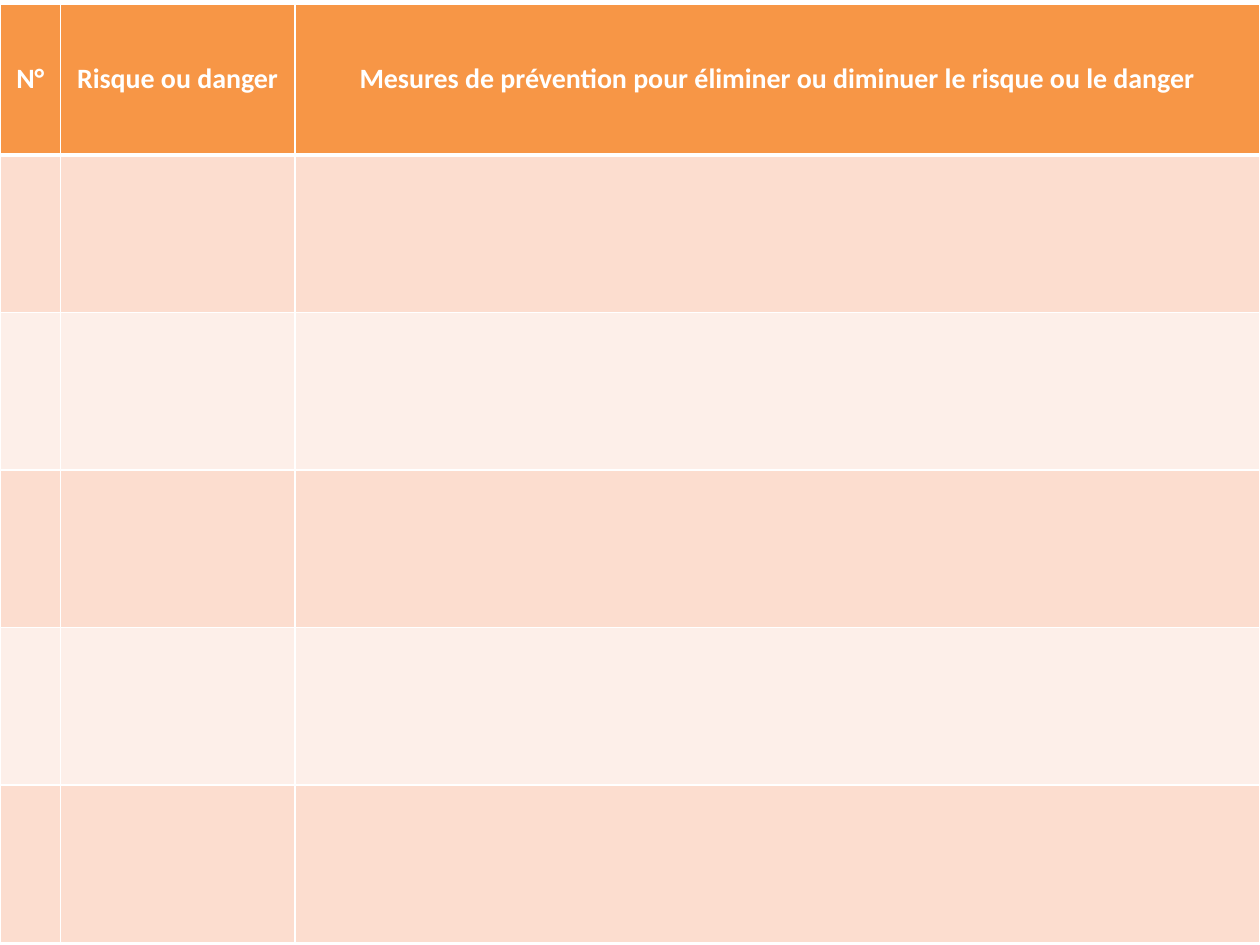
"""Build a one-slide risk prevention table with a header and five blank rows."""
from lxml.etree import SubElement
from pptx import Presentation
from pptx.dml.color import RGBColor
from pptx.enum.text import MSO_ANCHOR as Anchor, PP_ALIGN as Align
from pptx.oxml.ns import qn
from pptx.util import Inches, Pt


def paint(fill, color):
    fill.solid()
    fill.fore_color.rgb = RGBColor.from_string(color)


def add_borders(cell, top, bottom):
    properties = cell._tc.get_or_add_tcPr()
    for side, width in (("L", 1), ("R", 1), ("T", top), ("B", bottom)):
        line = SubElement(properties, qn(f"a:ln{side}"), w=str(Pt(width)))
        SubElement(SubElement(line, qn("a:solidFill")), qn("a:srgbClr"), val="FFFFFF")


HEADINGS = [
    "N°",
    "Risque ou danger",
    "Mesures de prévention pour éliminer ou diminuer le risque ou le danger",
]
COLUMN_WIDTHS = [0.48, 1.86, 7.66]
ROW_HEIGHTS = [1.2] + [1.25] * 5
BAND_COLORS = ["FDEFE9", "FCDDCF"]

deck = Presentation()
deck.slide_width, deck.slide_height = Inches(10), Inches(7.5)
page = deck.slides.add_slide(deck.slide_layouts[6])

table = page.shapes.add_table(
    len(ROW_HEIGHTS), len(COLUMN_WIDTHS),
    Inches(0), Inches(0.03), Inches(10), Inches(sum(ROW_HEIGHTS)),
).table
for column, width in zip(table.columns, COLUMN_WIDTHS):
    column.width = Inches(width)

for index, (row, height) in enumerate(zip(table.rows, ROW_HEIGHTS)):
    row.height = Inches(height)
    for cell in row.cells:
        add_borders(cell, top=3 if index == 1 else 1, bottom=3 if index == 0 else 1)
        paint(cell.fill, BAND_COLORS[index % 2] if index else "F79646")

for cell, heading in zip(table.rows[0].cells, HEADINGS):
    cell.vertical_anchor = Anchor.MIDDLE
    para = cell.text_frame.paragraphs[0]
    para.text = heading
    para.alignment = Align.CENTER
    font = para.runs[0].font
    font.name, font.size, font.bold = "Calibri", Pt(16), True
    paint(font.fill, "FFFFFF")

deck.save("out.pptx")
